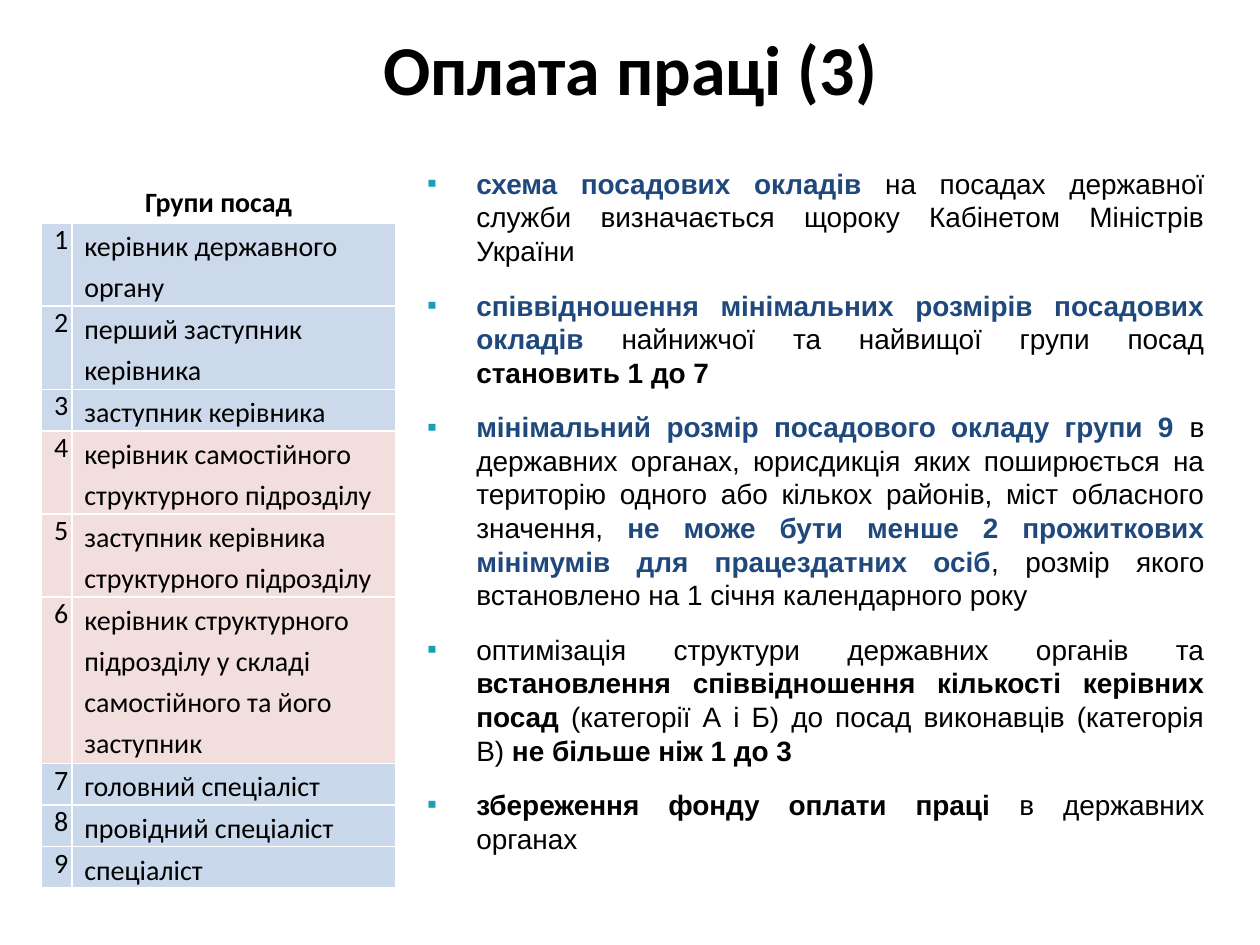
"""Build the slide on civil service pay: position groups and pay rules."""
import pptx
import pptx.util
import pptx.dml.color
import pptx.enum.text
import pptx.oxml.ns
from lxml import etree

COLORS = {"text": "000000", "accent": "1F497D", "bullet": "1C9FB6", "border": "FFFFFF",
          "top": "98B5D8", "middle": "E8BFBE", "staff": "95B3D7"}
TITLE = "Оплата праці (3)"
HEADER = "Групи посад"
GROUPS = [
    ("керівник державного органу", "top", 2),
    ("перший заступник керівника", "top", 2),
    ("заступник керівника", "top", 1),
    ("керівник самостійного структурного підрозділу", "middle", 2),
    ("заступник керівника структурного підрозділу", "middle", 2),
    ("керівник структурного підрозділу у складі самостійного та його заступник", "middle", 4),
    ("головний спеціаліст", "staff", 1),
    ("провідний спеціаліст", "staff", 1),
    ("спеціаліст", "staff", 1),
]
RULES = [
    [("схема посадових окладів", "accent", True),
     (" на посадах державної служби визначається щороку Кабінетом Міністрів України", "text", False)],
    [("співвідношення мінімальних розмірів посадових окладів ", "accent", True),
     ("найнижчої та найвищої групи посад", "text", False),
     None,
     ("становить 1 до 7", "text", True)],
    [("мінімальний розмір посадового окладу групи 9", "accent", True),
     (" в державних органах, юрисдикція яких поширюється на територію одного або кількох районів, "
      "міст обласного значення, ", "text", False),
     ("не може бути менше 2 прожиткових мінімумів для працездатних осіб", "accent", True),
     (", розмір якого встановлено на 1 січня календарного року", "text", False)],
    [("оптимізація структури державних органів та ", "text", False),
     ("встановлення співвідношення кількості керівних посад", "text", True),
     (" (категорії А і Б) до посад виконавців (категорія В) ", "text", False),
     ("не більше ніж 1 до 3", "text", True)],
    [("збереження фонду оплати праці", "text", True),
     (" в державних органах", "text", False)],
]
COLUMNS = (0.24, 2.57)
HEADER_ROW, LINE = 0.35, 0.33
ALIGN = pptx.enum.text.PP_ALIGN
AUTO = pptx.enum.text.MSO_AUTO_SIZE
inch = pptx.util.Inches


def place(shape, left, top, width, height):
    shape.left, shape.top, shape.width, shape.height = map(inch, (left, top, width, height))


def add_run(p, text, font, size, color="text", bold=False):
    r = p.add_run()
    r.text = text
    r.font.name, r.font.size, r.font.bold = font, pptx.util.Pt(size), bold
    r.font.color.rgb = pptx.dml.color.RGBColor.from_string(COLORS[color])


def add_xml(parent, tag, **attrs):
    element = etree.SubElement(parent, pptx.oxml.ns.qn(tag))
    for name, value in attrs.items():
        element.set(name, value)
    return element


def add_bullet(p):
    pPr = p._p.get_or_add_pPr()
    pPr.set("marL", str(inch(0.39)))
    pPr.set("indent", str(-inch(0.39)))
    add_xml(add_xml(pPr, "a:buClr"), "a:srgbClr", val=COLORS["bullet"])
    add_xml(pPr, "a:buFont", typeface="Arial")
    add_xml(pPr, "a:buChar", char="▪")


def style_cell(cell, fill=None):
    cell.margin_left = cell.margin_right = inch(0.1)
    cell.margin_top = cell.margin_bottom = 0
    tcPr = cell._tc.get_or_add_tcPr()
    for side in "LRTB":
        line = add_xml(tcPr, f"a:ln{side}", w=str(pptx.util.Pt(1)))
        add_xml(add_xml(line, "a:solidFill"), "a:srgbClr", val=COLORS["border"])
    if fill:
        cell.fill.solid()
        cell.fill.fore_color.rgb = pptx.dml.color.RGBColor.from_string(COLORS[fill])
        add_xml(tcPr.find(pptx.oxml.ns.qn("a:solidFill"))[0], "a:alpha", val="50000")
    else:
        cell.fill.background()


def fill_cell(cell, text, align, spacing=None, bold=False):
    p = cell.text_frame.paragraphs[0]
    p.alignment, p.line_spacing = align, spacing
    add_run(p, text, "Calibri", 16, bold=bold)


def add_title(s):
    place(s.shapes.title, 0.5, 0.3, 9, 0.62)
    tf = s.shapes.title.text_frame
    tf.auto_size = AUTO.NONE
    tf.vertical_anchor = pptx.enum.text.MSO_ANCHOR.BOTTOM
    p = tf.paragraphs[0]
    p.alignment = ALIGN.CENTER
    add_run(p, TITLE, "Calibri", 40, bold=True)


def add_rules(s):
    body = s.placeholders[1]
    place(body, 3.29, 1.27, 6.37, 5.63)
    tf = body.text_frame
    tf.word_wrap, tf.auto_size = True, AUTO.SHAPE_TO_FIT_TEXT
    for i, rule in enumerate(RULES):
        p = tf.add_paragraph() if i else tf.paragraphs[0]
        add_bullet(p)
        p.alignment = ALIGN.JUSTIFY
        p.space_before, p.space_after = pptx.util.Pt(0), pptx.util.Pt(12)
        for part in rule:
            if part is None:
                p.add_line_break()
            else:
                text, color, bold = part
                add_run(p, text, "Arial", 16, color, bold)


def add_groups(s):
    heights = [HEADER_ROW] + [LINE * lines for _, _, lines in GROUPS]
    table = s.shapes.add_table(len(heights), len(COLUMNS), inch(0.33), inch(1.42),
                               inch(sum(COLUMNS)), inch(sum(heights))).table
    table.first_row = table.horz_banding = False
    for column, width in zip(table.columns, COLUMNS):
        column.width = inch(width)
    for row, height in zip(table.rows, heights):
        row.height = inch(height)
    for i, fill in enumerate([None] + [group[1] for group in GROUPS]):
        for cell in table.rows[i].cells:
            style_cell(cell, fill)
    table.cell(0, 0).merge(table.cell(0, 1))
    fill_cell(table.cell(0, 0), HEADER, ALIGN.CENTER, 1.2, True)
    for i, (name, _, _) in enumerate(GROUPS, 1):
        fill_cell(table.cell(i, 0), str(i), ALIGN.CENTER)
        fill_cell(table.cell(i, 1), name, ALIGN.LEFT, 1.2)


def main():
    prs = pptx.Presentation()
    prs.slide_width, prs.slide_height = inch(10), inch(7.5)
    s = prs.slides.add_slide(prs.slide_layouts[1])
    add_title(s)
    add_rules(s)
    add_groups(s)
    prs.save("out.pptx")


if __name__ == "__main__":
    main()
